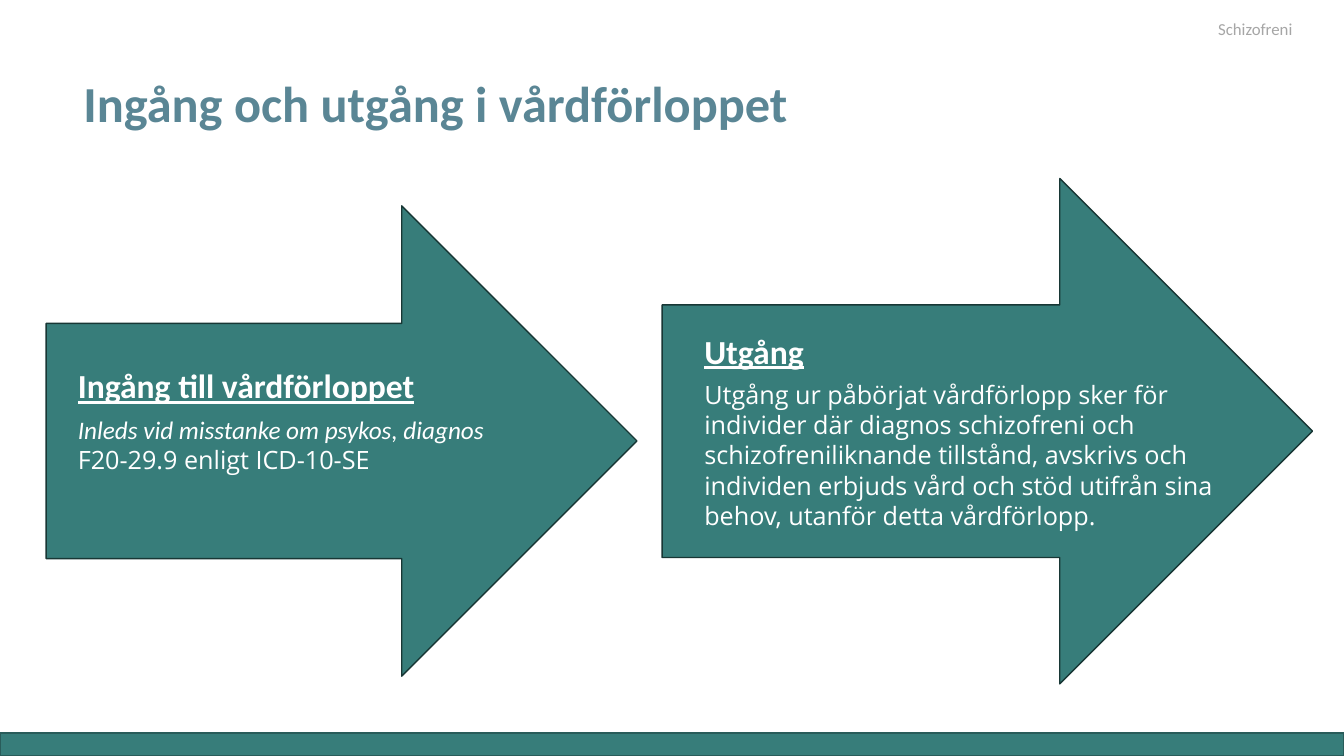
from pptx import Presentation
from pptx.dml.color import RGBColor
from pptx.enum.shapes import MSO_SHAPE as Preset
from pptx.enum.text import MSO_ANCHOR as Anchor
from pptx.util import Pt

TEAL = "377D7A"
WHITE = "FFFFFF"
SLIDE_W, SLIDE_H = 960, 540


def color(code):
    """Turn a hex string into a colour."""
    return RGBColor.from_string(code)


def add_block(slide, preset, box, outline):
    """Draw a teal shape with a thin outline in the given box."""
    block = slide.shapes.add_shape(preset, *map(Pt, box))
    block.shadow.inherit = False
    block.fill.solid()
    block.fill.fore_color.rgb = color(TEAL)
    block.line.color.rgb = color(outline)
    block.line.width = Pt(1)


def add_text(slide, box, anchor=Anchor.TOP):
    """Add an empty wrapping text box and return its frame."""
    frame = slide.shapes.add_textbox(*map(Pt, box)).text_frame
    frame.word_wrap = True
    frame.vertical_anchor = anchor
    return frame


def add_run(paragraph, words, size, hue, face="Calibri", bold=False, italic=False, underline=False):
    """Append one styled run to a paragraph."""
    run = paragraph.add_run()
    run.text = words
    font = run.font
    font.name, font.size = face, Pt(size)
    font.bold, font.italic, font.underline = bold, italic, underline
    font.color.rgb = color(hue)


def add_header(slide, box):
    """Place the topic label and the title from the top of the box."""
    left, top, width, height = box
    topic = add_text(slide, (left + width - 97, top + 10, 97, 22)).paragraphs[0]
    add_run(topic, "Schizofreni", 12, "A6A6A6")
    title = add_text(slide, (left + 52.5, top + 57, 755, 42), Anchor.BOTTOM).paragraphs[0]
    title.line_spacing = 0.9
    add_run(title, "Ingång och utgång i vårdförloppet", 36, "5A8695", bold=True)


def add_stage(slide, box, text_box, heading, details, heading_spacing=None):
    """Draw an arrow with a heading and details placed relative to its corner."""
    left, top, width, height = box
    inset_x, inset_y, text_w, text_h = text_box
    add_block(slide, Preset.RIGHT_ARROW, box, "183735")
    frame = add_text(slide, (left + inset_x, top + inset_y, text_w, text_h))
    lead = frame.paragraphs[0]
    if heading_spacing:
        lead.line_spacing = heading_spacing
    add_run(lead, heading, 24, WHITE, bold=True, underline=True)
    body = frame.add_paragraph()
    body.space_before = Pt(6)
    for words, face, italic in details:
        add_run(body, words, 18, WHITE, face, italic=italic)


def add_footer(slide, box):
    """Draw the band along the bottom of the slide."""
    add_block(slide, Preset.RECTANGLE, box, "295C5A")


def main():
    """Build and save the slide."""
    deck = Presentation()
    deck.slide_width, deck.slide_height = Pt(SLIDE_W), Pt(SLIDE_H)
    slide = deck.slides.add_slide(deck.slide_layouts[6])

    add_footer(slide, (0, 523.5, SLIDE_W, 16.5))
    add_header(slide, (0, 0, SLIDE_W, 100))
    add_stage(
        slide, (473, 127.5, 464.5, 361), (23, 105, 406, 351), "Utgång",
        [("Utgång ur påbörjat vårdförlopp sker för individer där diagnos "
          "schizofreni och schizofreniliknande tillstånd, avskrivs och "
          "individen erbjuds vård och stöd utifrån sina behov, utanför "
          "detta vårdförlopp.", "Open Sans", False)])
    add_stage(
        slide, (33, 147, 422, 336), (15.5, 106, 342, 91), "Ingång till vårdförloppet",
        [("Inleds vid misstanke om psykos, diagnos ", "Calibri", True),
         ("F20-29.9 enligt ICD-10-SE", "Open Sans", False)],
        heading_spacing=1.15)

    deck.save("out.pptx")


if __name__ == "__main__":
    main()
